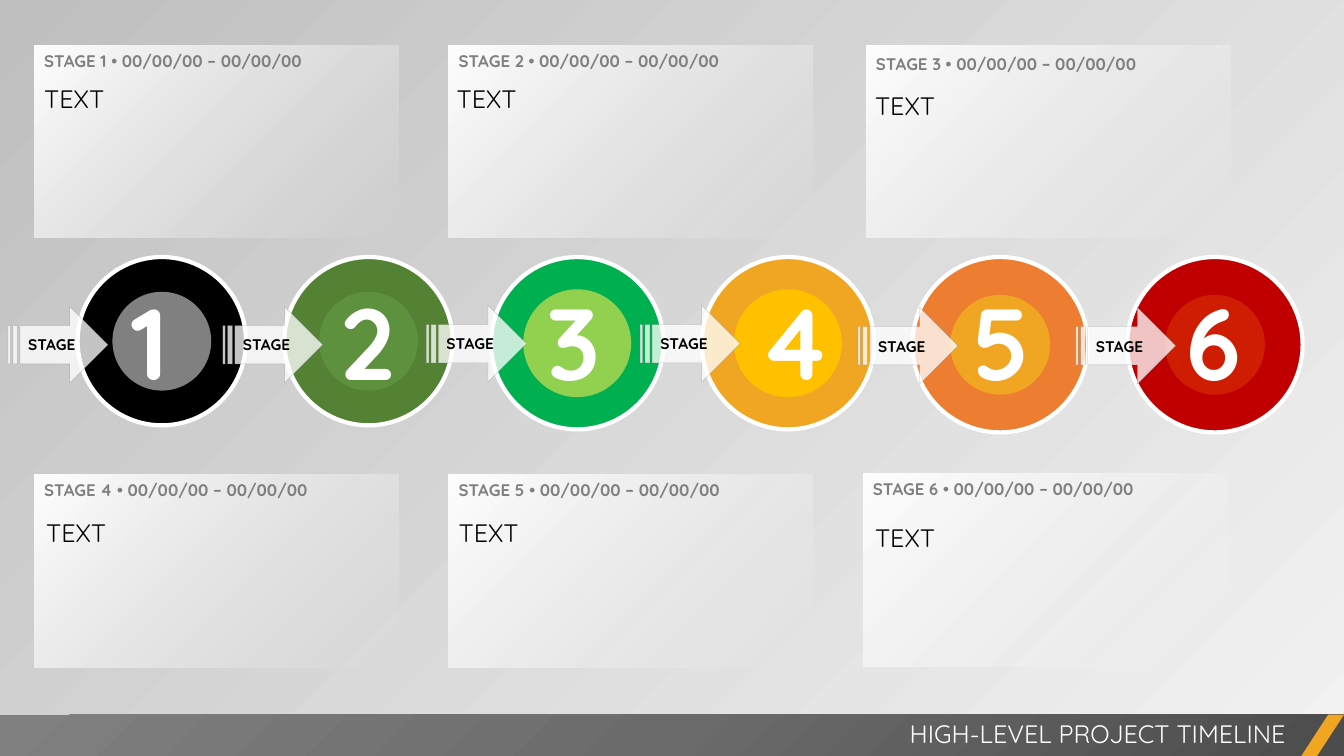
import pptx
import pptx.util
import pptx.dml.color
import pptx.enum.shapes
import pptx.enum.text
import pptx.oxml
import pptx.oxml.ns
from lxml import etree

WIDTH, HEIGHT = 13.33, 7.5
FONT = "Quicksand"
SHAPES = pptx.enum.shapes.MSO_SHAPE
TITLE = "HIGH-LEVEL PROJECT TIMELINE"
DATES = "00/00/00 – 00/00/00"

# Stages: ring left, ring size, core size, ring colour, core colour,
# arrow left, arrow top, digit left
STAGES = [
    (0.77, 1.67, 0.98, "000000", "808080", 0.08, 3.04, 1.21),
    (2.82, 1.67, 0.98, "548235", "5E913E", 2.21, 3.04, 3.28),
    (4.87, 1.71, 1.07, "00B050", "92D050", 4.23, 3.03, 5.33),
    (6.96, 1.71, 1.07, "F0A622", "FFC000", 6.35, 3.03, 7.43),
    (9.05, 1.74, 0.99, "ED7D31", "F0A622", 8.51, 3.05, 9.55),
    (11.18, 1.74, 0.99, "C00000", "CE1D02", 10.67, 3.05, 11.67),
]
RING_TOP = 2.55

# Cards: left, top, heading drop, body left, body top
CARDS = [
    (0.34, 0.45, 0, 0.34, 0.78),
    (4.45, 0.45, 0, 4.43, 0.78),
    (8.59, 0.45, 0.03, 8.58, 0.85),
    (0.34, 4.71, 0, 0.36, 5.08),
    (4.45, 4.71, 0, 4.45, 5.08),
    (8.56, 4.70, 0, 8.58, 5.13),
]
CARD_WIDTH, CARD_HEIGHT = 3.61, 1.91
BAR_TOP, BAR_HEIGHT = 7.09, 0.42

LINEAR = '<a:lin ang="13500000" scaled="0"/>'
CORNER = '<a:path path="circle"><a:fillToRect l="100000" t="100000"/></a:path>'
BACKGROUND_STOPS = [(0, "F2F2F2", 40), (100, "BFBFBF", 100)]
CARD_STOPS = [(0, "F2F2F2", 0), (100, "FFFFFF", 100)]
BAR_STOPS = [(0, "4C4C4C", 100), (50, "6B6B6B", 100), (100, "808080", 100)]

presentation = pptx.Presentation()
presentation.slide_width = pptx.util.Inches(WIDTH)
presentation.slide_height = pptx.util.Inches(HEIGHT)
slide = presentation.slides.add_slide(presentation.slide_layouts[6])


def color(value):
    return pptx.dml.color.RGBColor.from_string(value)


def inches(*values):
    return [pptx.util.Inches(value) for value in values]


def set_alpha(parent, percent):
    """Make the solid fill inside parent partly transparent."""
    solid = parent.find(pptx.oxml.ns.qn("a:solidFill"))
    etree.SubElement(solid[0], pptx.oxml.ns.qn("a:alpha"), val=str(percent * 1000))


def set_gradient(parent, stops, direction):
    """Swap the solid fill inside parent for a gradient."""
    stop_xml = "".join(
        f'<a:gs pos="{position * 1000}"><a:srgbClr val="{value}">'
        f'<a:alpha val="{alpha * 1000}"/></a:srgbClr></a:gs>'
        for position, value, alpha in stops)
    gradient = pptx.oxml.parse_xml(
        f'<a:gradFill {pptx.oxml.ns.nsdecls("a")} rotWithShape="1">'
        f'<a:gsLst>{stop_xml}</a:gsLst>{direction}</a:gradFill>')
    parent.replace(parent.find(pptx.oxml.ns.qn("a:solidFill")), gradient)


def style(shape, fill, line=None, line_width=0):
    shape.shadow.inherit = False
    shape.fill.solid()
    shape.fill.fore_color.rgb = color(fill)
    if line:
        shape.line.color.rgb = color(line)
        shape.line.width = pptx.util.Pt(line_width)
    else:
        shape.line.fill.background()
    return shape


def add_shape(kind, box, fill, line=None, line_width=0):
    return style(slide.shapes.add_shape(kind, *inches(*box)), fill, line, line_width)


def add_text(box, text, size, value, bold=False, align="LEFT", shadow=False):
    frame = slide.shapes.add_textbox(*inches(*box)).text_frame
    frame.word_wrap = True
    frame.auto_size = pptx.enum.text.MSO_AUTO_SIZE.SHAPE_TO_FIT_TEXT
    paragraph = frame.paragraphs[0]
    paragraph.alignment = getattr(pptx.enum.text.PP_ALIGN, align)
    run = paragraph.add_run()
    run.text = text
    run.font.name = FONT
    run.font.size = pptx.util.Pt(size)
    run.font.bold = bold
    run.font.color.rgb = color(value)
    if shadow:
        effect = pptx.oxml.parse_xml(
            f'<a:effectLst {pptx.oxml.ns.nsdecls("a")}>'
            '<a:outerShdw blurRad="38100" dist="19050" dir="2700000">'
            '<a:srgbClr val="000000"><a:alpha val="40000"/></a:srgbClr>'
            '</a:outerShdw></a:effectLst>')
        run.font.fill._xPr.find(pptx.oxml.ns.qn("a:solidFill")).addnext(effect)


# Background
slide.background.fill.solid()
slide.background.fill.fore_color.rgb = color("FFFFFF")
set_gradient(slide.element.find(".//" + pptx.oxml.ns.qn("p:bgPr")),
             BACKGROUND_STOPS, LINEAR)

# Cards with heading and body
for number, (left, top, drop, body_left, body_top) in enumerate(CARDS, 1):
    card = add_shape(SHAPES.ROUNDED_RECTANGLE,
                     (left, top, CARD_WIDTH, CARD_HEIGHT), "FFFFFF")
    card.adjustments[0] = 0
    set_gradient(card.element.spPr, CARD_STOPS, LINEAR)
    add_text((left, top + drop, 3.63, 0.3), f"STAGE {number} • {DATES}",
             12, "808080", bold=True, shadow=True)
    add_text((body_left, body_top, 3.55, 0.4), "TEXT", 18, "000000", shadow=True)

# Stage circles
for left, ring, core, ring_color, core_color, *_ in STAGES:
    inset = (ring - core) / 2
    add_shape(SHAPES.OVAL, (left, RING_TOP, ring, ring), ring_color, "FFFFFF", 3)
    add_shape(SHAPES.OVAL, (left + inset, RING_TOP + inset, core, core), core_color)

# Arrows with labels, and stage digits
for number, stage in enumerate(STAGES, 1):
    arrow_left, arrow_top, digit_left = stage[5:]
    arrow = add_shape(SHAPES.STRIPED_RIGHT_ARROW,
                      (arrow_left, arrow_top, 0.99, 0.76), "FFFFFF", "808080", 0.25)
    set_alpha(arrow.element.spPr, 77)
    set_alpha(arrow.element.spPr.ln, 50)
    add_text((arrow_left + 0.1, arrow_top + 0.24, 0.79, 0.29), "STAGE",
             11, "000000", bold=True)
    add_text((digit_left, 2.73, 0.92, 1.31), str(number), 72, "FFFFFF", bold=True)

# Title bar
bottom = BAR_TOP + BAR_HEIGHT
builder = slide.shapes.build_freeform(*inches(0, BAR_TOP))
builder.add_line_segments(
    [inches(*point) for point in [(WIDTH, BAR_TOP), (WIDTH, bottom), (0, bottom)]])
bar = style(builder.convert_to_shape(), "808080")
set_gradient(bar.element.spPr, BAR_STOPS, CORNER)
accent = add_shape(SHAPES.PARALLELOGRAM,
                   (WIDTH - 0.43, BAR_TOP, 0.43, BAR_HEIGHT), "F0A622")
accent.adjustments[0] = 0.65
add_text((5.25, 7.08, 7.6, 0.4), TITLE, 18, "FFFFFF", align="RIGHT")

presentation.save("out.pptx")
